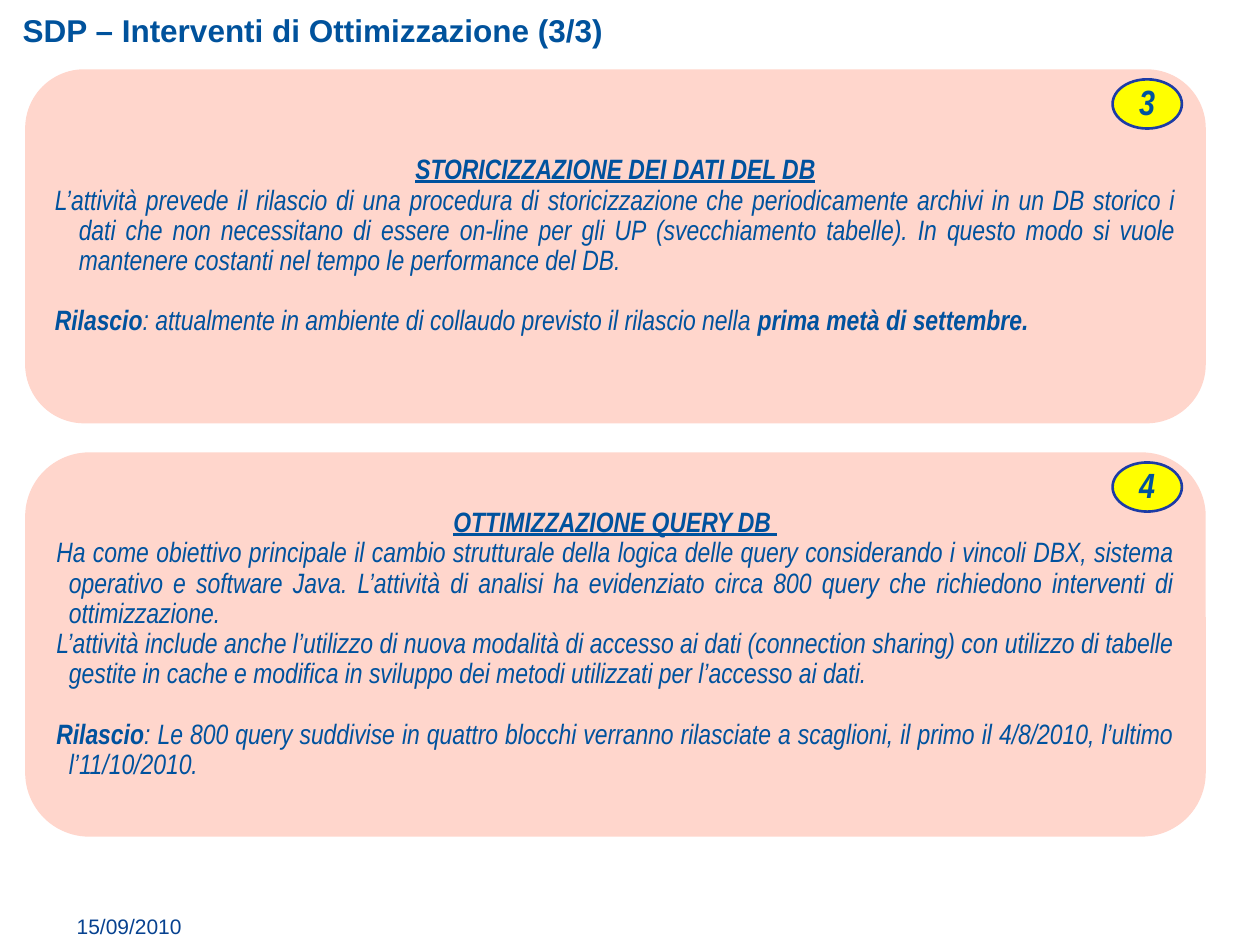
from dataclasses import dataclass

from pptx import Presentation
from pptx.dml.color import RGBColor
from pptx.enum.shapes import MSO_SHAPE as Shape
from pptx.enum.text import MSO_ANCHOR as Anchor, MSO_AUTO_SIZE as AutoSize, PP_ALIGN as Align
from pptx.util import Inches, Pt


@dataclass(frozen=True)
class Theme:
    text: str = "00529E"
    title: str = "00529C"
    date: str = "074290"
    panel: str = "FFD6CC"
    badge: str = "FFFF00"
    badge_line: str = "1C3CA6"
    heading_font: str = "Arial"
    body_font: str = "Arial Narrow"
    date_size: int = 12
    body_size: int = 16
    title_size: int = 18
    badge_size: int = 20


THEME = Theme()
LEFT, WIDTH = 0.2, 9.37
PANELS = [
    dict(number="3", top=0.55, height=2.81, hanging=0.19,
         heading="STORICIZZAZIONE DEI DATI DEL DB",
         body=["L’attività prevede il rilascio di una procedura di storicizzazione che "
               "periodicamente archivi in un DB storico i dati che non necessitano di essere "
               "on-line per gli UP (svecchiamento tabelle). In questo modo si vuole mantenere "
               "costanti nel tempo le performance del DB."],
         release=[(": attualmente in ambiente di collaudo previsto il rilascio nella ", False),
                  ("prima metà di settembre.", True)]),
    dict(number="4", top=3.59, height=3.05, hanging=0.1,
         heading="OTTIMIZZAZIONE QUERY DB ",
         body=["Ha come obiettivo principale il cambio strutturale della logica delle query "
               "considerando i vincoli DBX, sistema operativo e software Java. L’attività di "
               "analisi ha evidenziato circa 800 query che richiedono interventi di "
               "ottimizzazione. ",
               "L’attività include anche l’utilizzo di nuova modalità di accesso ai dati "
               "(connection sharing) con utilizzo di tabelle gestite in cache e modifica in "
               "sviluppo dei metodi utilizzati per l’accesso ai dati."],
         release=[(": Le 800 query suddivise in quattro blocchi verranno rilasciate a "
                   "scaglioni, il primo il 4/8/2010, l’ultimo l’11/10/2010.", False)]),
]


def assign(target, **values):
    for name, value in values.items():
        setattr(target, name, value)


def add_span(para, text, size, color, name, **styles):
    span = para.add_run()
    span.text = text
    assign(span.font, size=Pt(size), name=name, **styles)
    span.font.color.rgb = RGBColor.from_string(color)


def add_body_span(para, text, bold, size=THEME.body_size, **styles):
    add_span(para, text, size, THEME.text, THEME.body_font, bold=bold, italic=True, **styles)


def add_filled_shape(page, kind, left, top, width, height, fill, wrap):
    shape = page.shapes.add_shape(kind, *map(Inches, (left, top, width, height)))
    shape.shadow.inherit = False
    shape.fill.solid()
    shape.fill.fore_color.rgb = RGBColor.from_string(fill)
    assign(shape.text_frame, word_wrap=wrap, vertical_anchor=Anchor.MIDDLE,
           margin_left=Inches(0.1), margin_right=Inches(0.1),
           margin_top=Inches(0.04), margin_bottom=Inches(0.04))
    return shape


def add_panel(page, panel):
    shape = add_filled_shape(page, Shape.ROUNDED_RECTANGLE, LEFT, panel["top"], WIDTH,
                             panel["height"], THEME.panel, True)
    shape.line.fill.background()
    frame = shape.text_frame
    heading = frame.paragraphs[0]
    add_body_span(heading, panel["heading"], True, underline=True)
    for text in panel["body"]:
        add_body_span(frame.add_paragraph(), text, False)
    release = frame.add_paragraph()
    for text, bold in [("Rilascio", True), *panel["release"]]:
        add_body_span(release, text, bold)
    hanging = Inches(panel["hanging"])
    for para in frame.paragraphs:
        assign(para, alignment=Align.JUSTIFY, line_spacing=0.9)
        properties = para._p.get_or_add_pPr()
        properties.set("marL", str(hanging))
        properties.set("indent", str(-hanging))
    heading.alignment = Align.CENTER
    release.space_before = Pt(17.25)


def add_badge(page, panel):
    shape = add_filled_shape(page, Shape.OVAL, 8.83, panel["top"] + 0.08, 0.55, 0.39,
                             THEME.badge, False)
    shape.line.color.rgb = RGBColor.from_string(THEME.badge_line)
    shape.line.width = Pt(1.5)
    para = shape.text_frame.paragraphs[0]
    assign(para, alignment=Align.CENTER, line_spacing=0.9)
    add_body_span(para, panel["number"], True, THEME.badge_size)


def set_title(page, text):
    title = page.shapes.title
    assign(title, left=Inches(0.08), top=Inches(-0.22), width=Inches(6.5), height=Inches(0.71))
    assign(title.text_frame, vertical_anchor=Anchor.MIDDLE, word_wrap=True)
    para = title.text_frame.paragraphs[0]
    assign(para, alignment=Align.LEFT, line_spacing=Pt(36))
    add_span(para, text, THEME.title_size, THEME.title, THEME.heading_font, bold=True)


def add_date(page, text):
    box = page.shapes.add_textbox(*map(Inches, (0.51, 7.2, 1.05, 0.3)))
    assign(box.text_frame, word_wrap=False, auto_size=AutoSize.SHAPE_TO_FIT_TEXT)
    add_span(box.text_frame.paragraphs[0], text, THEME.date_size, THEME.date,
             THEME.heading_font)


def main():
    deck = Presentation()
    assign(deck, slide_width=Inches(10), slide_height=Inches(7.5))
    page = deck.slides.add_slide(deck.slide_layouts[5])
    set_title(page, "SDP – Interventi di Ottimizzazione (3/3)")
    add_date(page, "15/09/2010")
    for panel in PANELS:
        add_panel(page, panel)
        add_badge(page, panel)
    deck.save("out.pptx")


if __name__ == "__main__":
    main()
